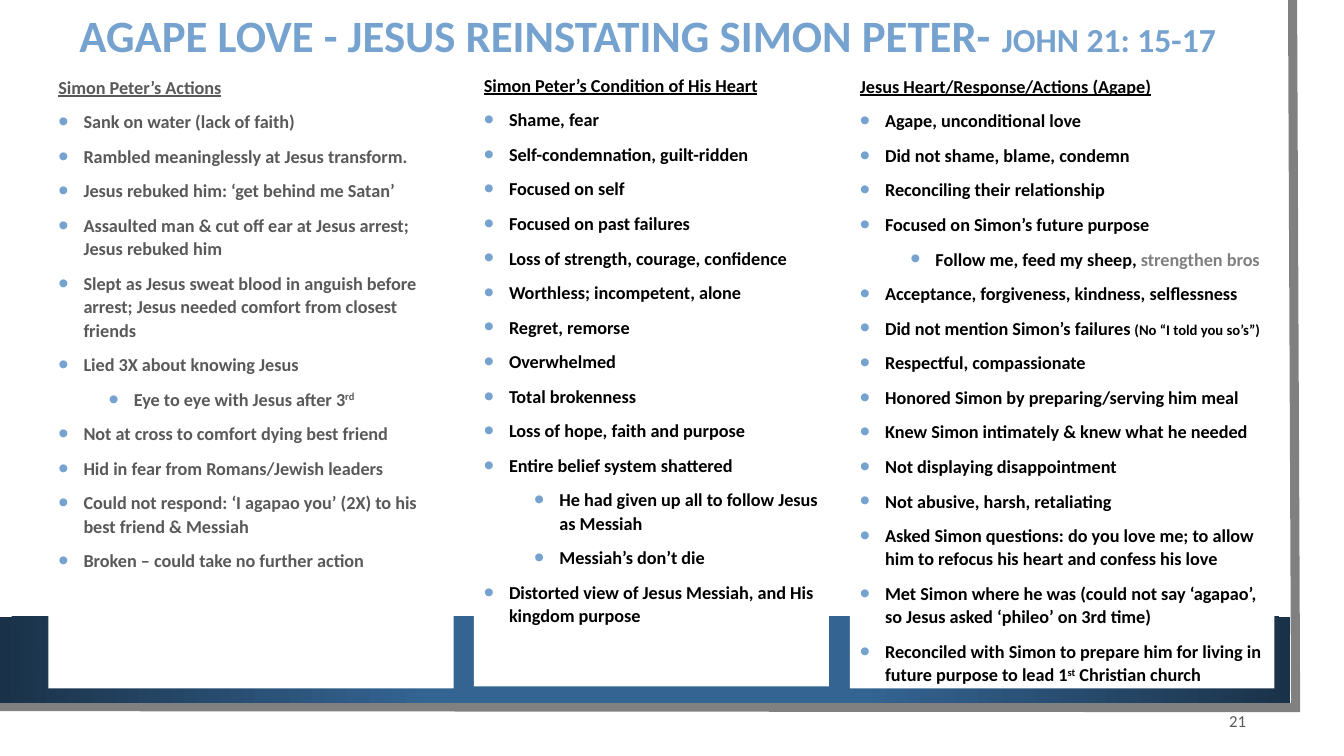
from lxml import etree
from pptx import Presentation
from pptx.dml.color import RGBColor
from pptx.enum.shapes import MSO_SHAPE
from pptx.enum.text import MSO_ANCHOR, PP_ALIGN
from pptx.oxml.ns import qn
from pptx.util import Inches, Pt

WHITE = RGBColor(0xFF, 0xFF, 0xFF)
BLACK = RGBColor(0x00, 0x00, 0x00)
GRAY = RGBColor(0x80, 0x80, 0x80)
DARK_GRAY = RGBColor(0x59, 0x59, 0x59)
LIGHT_BLUE = RGBColor(0x75, 0xA2, 0xCE)
BAND_BLUE = RGBColor(0x34, 0x64, 0x92)
BAND_NAVY = RGBColor(0x1A, 0x32, 0x49)

SUPERSCRIPT = {"superscript": True}

ACTIONS = [
    (0, "Sank on water (lack of faith)"),
    (0, "Rambled meaninglessly at Jesus transform."),
    (0, "Jesus rebuked him: ‘get behind me Satan’"),
    (0, "Assaulted man & cut off ear at Jesus arrest; Jesus rebuked him"),
    (0, "Slept as Jesus sweat blood in anguish before arrest; "
        "Jesus needed comfort from closest friends"),
    (0, "Lied 3X about knowing Jesus"),
    (1, "Eye to eye with Jesus after 3", ("rd", SUPERSCRIPT)),
    (0, "Not at cross to comfort dying best friend"),
    (0, "Hid in fear from Romans/Jewish leaders"),
    (0, "Could not respond: ‘I agapao you’ (2X) to his best friend & Messiah"),
    (0, "Broken – could take no further action"),
]
CONDITION = [
    (0, "Shame, fear"),
    (0, "Self-condemnation, guilt-ridden"),
    (0, "Focused on self"),
    (0, "Focused on past failures"),
    (0, "Loss of strength, courage, confidence"),
    (0, "Worthless; incompetent, alone"),
    (0, "Regret, remorse"),
    (0, "Overwhelmed"),
    (0, "Total brokenness"),
    (0, "Loss of hope, faith and purpose"),
    (0, "Entire belief system shattered"),
    (1, "He had given up all to follow Jesus as Messiah"),
    (1, "Messiah’s don’t die"),
    (0, "Distorted view of Jesus Messiah, and His kingdom purpose"),
]
RESPONSE = [
    (0, "Agape, unconditional love"),
    (0, "Did not shame, blame, condemn"),
    (0, "Reconciling their relationship"),
    (0, "Focused on Simon’s future purpose"),
    (1, "Follow me, feed my sheep, ", ("strengthen bros", {"color": GRAY})),
    (0, "Acceptance, forgiveness, kindness, selflessness"),
    (0, "Did not mention Simon’s failures ", ("(No “I told you so’s”)", {"size": 10.5})),
    (0, "Respectful, compassionate"),
    (0, "Honored Simon by preparing/serving him meal"),
    (0, "Knew Simon intimately & knew what he needed"),
    (0, "Not displaying disappointment"),
    (0, "Not abusive, harsh, retaliating"),
    (0, "Asked Simon questions: do you love me; to allow him to refocus "
        "his heart and confess his love"),
    (0, "Met Simon where he was (could not say ‘agapao’, "
        "so Jesus asked ‘phileo’ on 3rd time)"),
    (0, "Reconciled with Simon to prepare him for living in future purpose to lead 1",
     ("st", SUPERSCRIPT), (" Christian church", {})),
]
COLUMNS = [
    ((0.48, 0.69, 4.02, 6.14), DARK_GRAY, "Simon Peter’s Actions", ACTIONS),
    ((4.7, 0.67, 3.52, 6.14), BLACK, "Simon Peter’s Condition of His Heart", CONDITION),
    ((8.43, 0.68, 4.21, 6.15), BLACK, "Jesus Heart/Response/Actions (Agape)", RESPONSE),
]


def add_rectangle(slide, box):
    shape = slide.shapes.add_shape(MSO_SHAPE.RECTANGLE, *map(Inches, box))
    shape.shadow.inherit = False
    shape.fill.solid()
    shape.fill.fore_color.rgb = WHITE
    shape.line.fill.background()
    return shape


def add_run(paragraph, text, size, color, bold=True, underline=False, superscript=False):
    run = paragraph.add_run()
    run.text = text
    font = run.font
    font.name, font.size, font.bold = "Calibri", Pt(size), bold
    font.color.rgb = color
    if underline:
        font.underline = True
    if superscript:
        run._r.get_or_add_rPr().set("baseline", "30000")


def add_bullet(paragraph, level):
    paragraph.level = level
    properties = paragraph._p.get_or_add_pPr()
    properties.set("marL", str(Inches(0.25 + 0.5 * level)))
    properties.set("indent", str(Inches(-0.25)))
    color = etree.SubElement(properties, qn("a:buClr"))
    etree.SubElement(color, qn("a:srgbClr")).set("val", str(LIGHT_BLUE))
    for tag, name, value in (("a:buSzPct", "val", "160000"),
                             ("a:buFont", "typeface", "Arial"),
                             ("a:buChar", "char", "•")):
        etree.SubElement(properties, qn(tag)).set(name, value)


def format_column_paragraph(paragraph):
    paragraph.alignment = PP_ALIGN.LEFT
    paragraph.line_spacing = 1.07
    paragraph.space_after = Pt(8)


def add_column(slide, box, color, heading, items):
    text_frame = add_rectangle(slide, box).text_frame
    text_frame.word_wrap = True
    text_frame.vertical_anchor = MSO_ANCHOR.TOP
    paragraph = text_frame.paragraphs[0]
    format_column_paragraph(paragraph)
    add_run(paragraph, heading, 13, color, underline=True)
    for level, text, *extras in items:
        paragraph = text_frame.add_paragraph()
        add_bullet(paragraph, level)
        format_column_paragraph(paragraph)
        for part, style in [(text, {}), *extras]:
            add_run(paragraph, part, **{"size": 13, "color": color, **style})


def add_band(slide):
    fill = add_rectangle(slide, (0, 6.12, 12.8, 0.85)).fill
    fill.gradient()
    stops = zip(fill.gradient_stops, (0.34, 1), (BAND_BLUE, BAND_NAVY))
    for stop, position, color in stops:
        stop.position = position
        stop.color.rgb = color
    gradient = fill._xPr.find(qn("a:gradFill"))
    gradient.remove(gradient.find(qn("a:lin")))
    circle = etree.SubElement(gradient, qn("a:path"))
    circle.set("path", "circle")
    center = etree.SubElement(circle, qn("a:fillToRect"))
    for side in "ltrb":
        center.set(side, "50000")


def add_page_edge(slide):
    builder = slide.shapes.build_freeform(Inches(12.82), 0)
    builder.add_line_segments(
        [(Inches(12.85), Inches(7.02)), (Inches(-0.03), Inches(7.01))], close=False)
    shape = builder.convert_to_shape()
    shape.shadow.inherit = False
    shape.fill.background()
    shape.line.color.rgb = GRAY
    shape.line.width = Pt(6.5)
    etree.SubElement(shape.line._get_or_add_ln(), qn("a:miter")).set("lim", "800000")


def add_text(slide, box):
    text_frame = slide.shapes.add_textbox(*map(Inches, box)).text_frame
    text_frame.vertical_anchor = MSO_ANCHOR.MIDDLE
    return text_frame


def add_title(slide):
    text_frame = add_text(slide, (0.69, -0.25, 11.64, 1.26))
    text_frame.word_wrap = True
    paragraph = text_frame.paragraphs[0]
    paragraph.line_spacing = 0.9
    add_run(paragraph, "AGAPE LOVE - JESUS REINSTATING SIMON PETER- ", 32, LIGHT_BLUE)
    add_run(paragraph, "JOHN 21: 15-17", 24, LIGHT_BLUE)


def add_slide_number(slide):
    text_frame = add_text(slide, (12.14, 7, 0.27, 0.3))
    text_frame.word_wrap = False
    text_frame.margin_left = text_frame.margin_right = Inches(0.05)
    text_frame.margin_top = text_frame.margin_bottom = Inches(0.05)
    paragraph = text_frame.paragraphs[0]
    paragraph.alignment = PP_ALIGN.RIGHT
    add_run(paragraph, "21", 12, DARK_GRAY, bold=False)


def main():
    presentation = Presentation()
    presentation.slide_width = Inches(13.33)
    presentation.slide_height = Inches(7.5)
    slide = presentation.slides.add_slide(presentation.slide_layouts[6])
    add_rectangle(slide, (0, 0, 13.1, 7.27))
    add_page_edge(slide)
    add_band(slide)
    add_title(slide)
    for column in COLUMNS:
        add_column(slide, *column)
    add_slide_number(slide)
    presentation.save("out.pptx")


if __name__ == "__main__":
    main()
